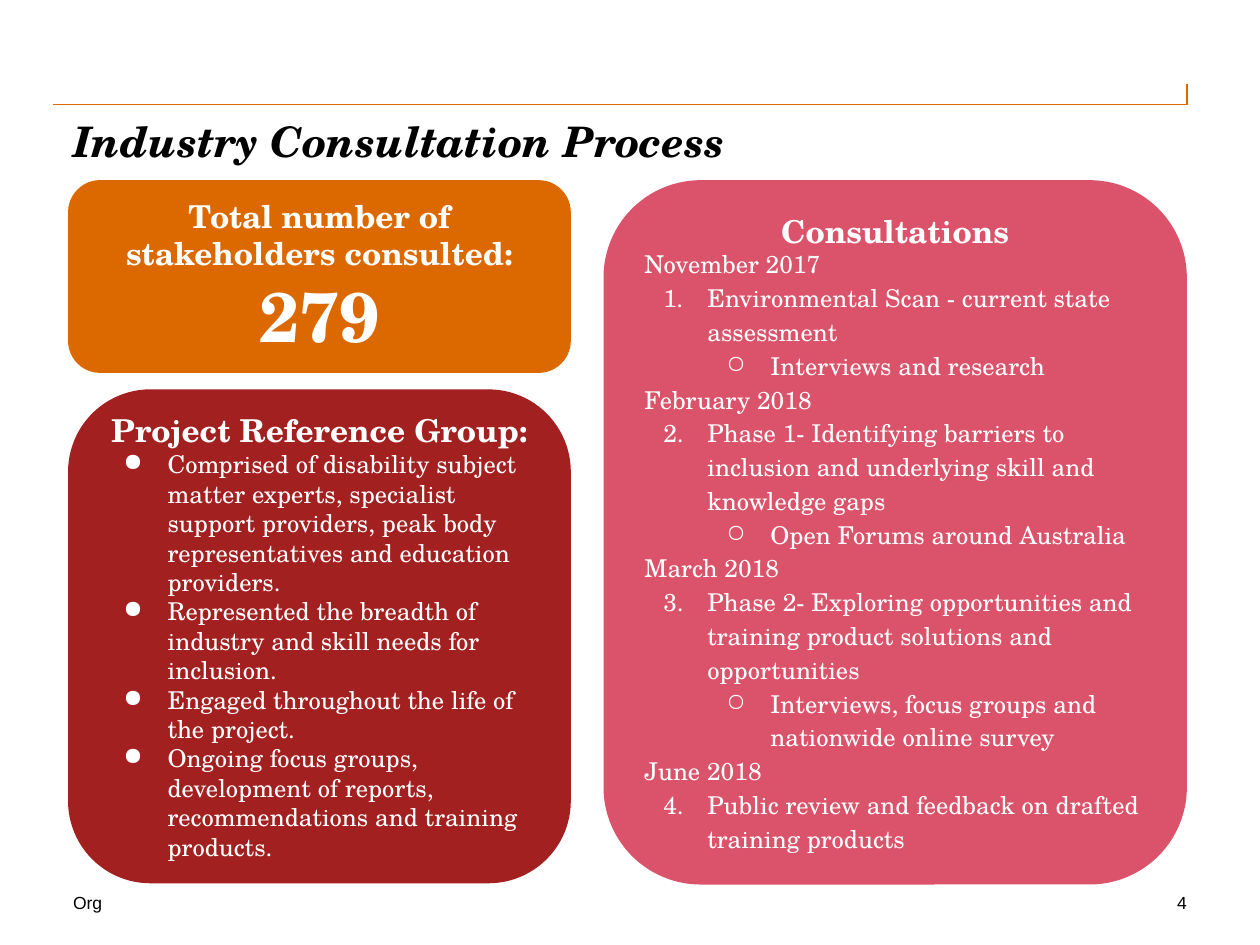
from lxml import etree
from pptx import Presentation
from pptx import util as u
from pptx.dml.color import RGBColor
from pptx.enum import shapes, text
from pptx.oxml.ns import qn

SERIF = "TeX Gyre Schola"
ORANGE, ROSE, RED = "DC6900", "DB536A", "A32020"
WHITE, BLACK = "FFFFFF", "000000"
LEFT, CENTER, RIGHT = text.PP_ALIGN.LEFT, text.PP_ALIGN.CENTER, text.PP_ALIGN.RIGHT

CONSULTATIONS = [
    ("November 2017", "Environmental Scan - current state assessment",
     "Interviews and research"),
    ("February 2018",
     "Phase 1- Identifying barriers to inclusion and underlying skill and knowledge gaps",
     "Open Forums around Australia"),
    ("March 2018",
     "Phase 2- Exploring opportunities and training product solutions and opportunities",
     "Interviews, focus groups and nationwide online survey"),
    ("June 2018", "Public review and feedback on drafted training products", None),
]
REFERENCE_GROUP = [
    "Comprised of disability subject matter experts, specialist support providers, "
    "peak body representatives and education providers.",
    "Represented the breadth of industry and skill needs for inclusion.",
    "Engaged throughout the life of the project.",
    "Ongoing focus groups, development of reports, recommendations and training products.",
]


def color(value):
    return RGBColor.from_string(value)


def add_bullet(paragraph, marker, level):
    properties = paragraph._p.get_or_add_pPr()
    properties.set("marL", str(u.Inches(0.5 * (level + 1))))
    properties.set("indent", str(u.Inches(-0.35)))
    bullet_color = etree.SubElement(properties, qn("a:buClr"))
    etree.SubElement(bullet_color, qn("a:srgbClr"), val=WHITE)
    if isinstance(marker, int):
        etree.SubElement(properties, qn("a:buAutoNum"), type="arabicPeriod", startAt=str(marker))
    else:
        etree.SubElement(properties, qn("a:buChar"), char=marker)


def add_text(frame, words, size=14, font=SERIF, fill=WHITE, bold=False, italic=False,
             align=LEFT, spacing=1.0, marker=None, level=0):
    paragraph = frame.paragraphs[0]
    if paragraph.runs:
        paragraph = frame.add_paragraph()
    paragraph.alignment = align
    paragraph.line_spacing = spacing
    paragraph.level = level
    if marker is not None:
        add_bullet(paragraph, marker, level)
    run = paragraph.add_run()
    run.text = words
    run.font.name = font
    run.font.size = u.Pt(size)
    run.font.bold = bold
    run.font.italic = italic
    run.font.color.rgb = color(fill)


def prepare_frame(frame):
    frame.word_wrap = True
    frame.auto_size = text.MSO_AUTO_SIZE.NONE
    frame.vertical_anchor = text.MSO_ANCHOR.TOP
    frame.margin_left = frame.margin_right = frame.margin_top = frame.margin_bottom = 0


def add_rule(slide, left, top, width, height):
    right, bottom = left + width, top + height
    builder = slide.shapes.build_freeform(u.Inches(left), u.Inches(bottom))
    builder.add_line_segments(
        [(u.Inches(right), u.Inches(bottom)), (u.Inches(right), u.Inches(top))], close=False)
    rule = builder.convert_to_shape()
    rule.shadow.inherit = False
    rule.fill.background()
    rule.line.color.rgb = color(ORANGE)
    rule.line.width = u.Pt(1)


def add_title(slide, left, top, width, height):
    title = slide.shapes.title
    title.left, title.top = u.Inches(left), u.Inches(top)
    title.width, title.height = u.Inches(width), u.Inches(height)
    prepare_frame(title.text_frame)
    add_text(title.text_frame, "Industry Consultation Process", size=24, fill=BLACK,
             bold=True, italic=True)


def add_footer(slide, words, left, top, width, height, align=LEFT):
    footer = slide.shapes.add_textbox(*map(u.Inches, (left, top, width, height)))
    prepare_frame(footer.text_frame)
    add_text(footer.text_frame, words, size=10, font="Arial", fill=BLACK, align=align)


def add_card(slide, heading, fill, left, top, width, height):
    card = slide.shapes.add_shape(shapes.MSO_SHAPE.ROUNDED_RECTANGLE,
                                  *map(u.Inches, (left, top, width, height)))
    card.shadow.inherit = False
    card.fill.solid()
    card.fill.fore_color.rgb = color(fill)
    card.line.fill.background()
    frame = card.text_frame
    frame.word_wrap = True
    frame.vertical_anchor = text.MSO_ANCHOR.MIDDLE
    add_text(frame, heading, size=18, bold=True, align=CENTER)
    return frame


def add_total(slide, *box):
    frame = add_card(slide, "Total number of stakeholders consulted:", ORANGE, *box)
    add_text(frame, "279", size=40, bold=True, align=CENTER)


def add_reference_group(slide, *box):
    frame = add_card(slide, "Project Reference Group:", RED, *box)
    for item in REFERENCE_GROUP:
        add_text(frame, item, marker="●")


def add_consultations(slide, *box):
    frame = add_card(slide, "Consultations", ROSE, *box)
    for number, (month, phase, method) in enumerate(CONSULTATIONS, start=1):
        add_text(frame, month, spacing=1.0 if number == 1 else 1.15)
        add_text(frame, phase, spacing=1.15, marker=number)
        if method:
            add_text(frame, method, spacing=1.15, marker="○", level=1)


def main():
    presentation = Presentation()
    presentation.slide_width, presentation.slide_height = u.Inches(10), u.Inches(7.5)
    slide = presentation.slides.add_slide(presentation.slide_layouts[5])
    add_footer(slide, "Org", 0.58, 7.08, 2.83, 0.17)
    add_rule(slide, 0.42, 0.67, 9, 0.16)
    add_footer(slide, "4", 7.75, 7.08, 1.67, 0.17, align=RIGHT)
    add_title(slide, 0.58, 0.92, 8.83, 0.37)
    add_consultations(slide, 4.79, 1.43, 4.63, 5.59)
    add_total(slide, 0.54, 1.43, 3.99, 1.53)
    add_reference_group(slide, 0.54, 3.09, 3.99, 3.92)
    presentation.save("out.pptx")


if __name__ == "__main__":
    main()
